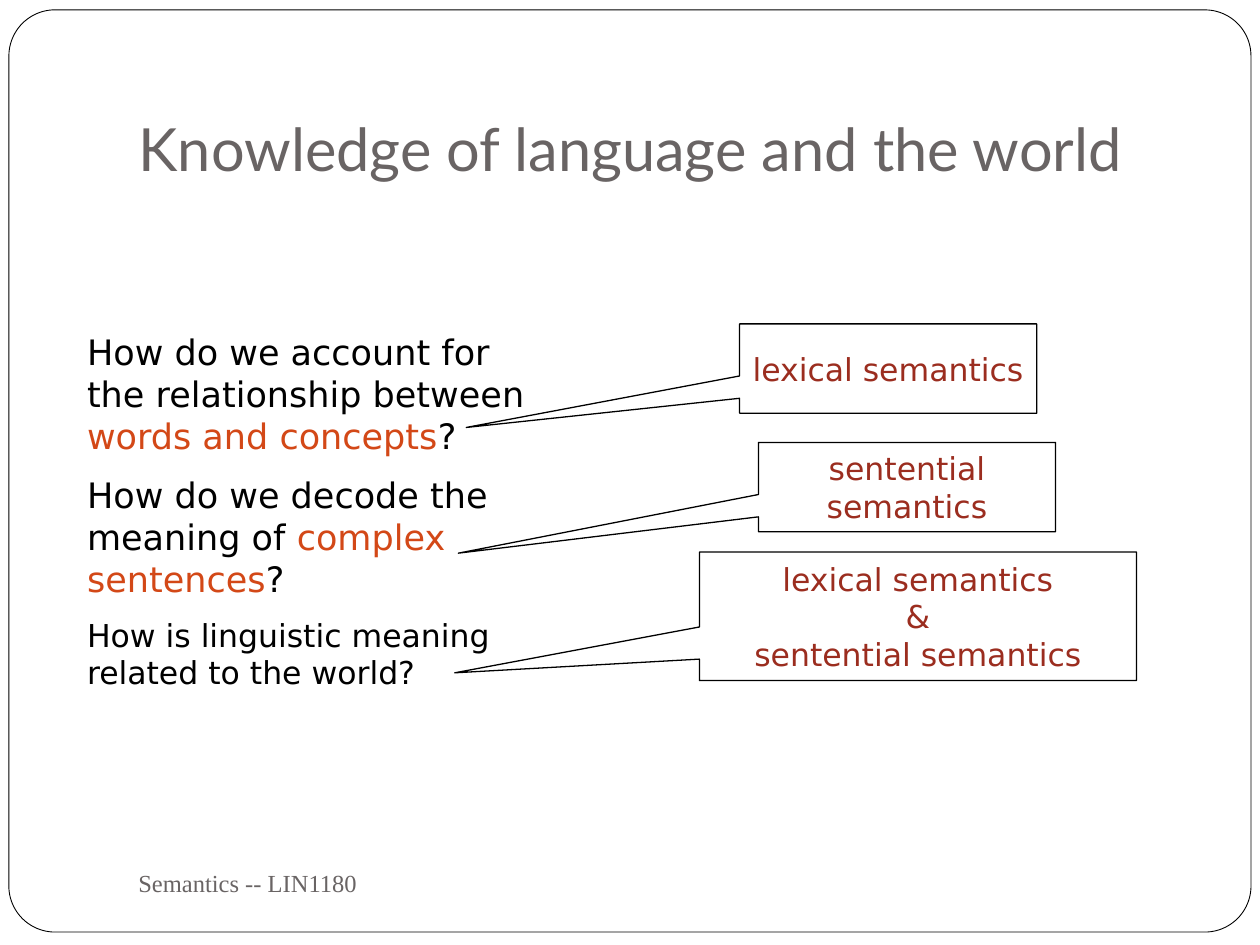
from dataclasses import dataclass

from lxml import etree
from pptx import Presentation
from pptx.dml.color import RGBColor
from pptx.enum import shapes, text
from pptx.oxml import ns
from pptx.util import Cm, Pt


@dataclass(frozen=True)
class Theme:
    white: str = "FFFFFF"
    black: str = "000000"
    grey: str = "696464"
    accent: str = "D34817"
    note: str = "9B2D1F"
    head: str = "Lato"
    body: str = "DejaVu Sans"
    foot: str = "Times New Roman"
    big: int = 34
    mid: int = 20
    small: int = 18
    tiny: int = 14


@dataclass(frozen=True)
class Box:
    x: float
    y: float
    w: float
    h: float


@dataclass(frozen=True)
class Run:
    text: str
    size: int
    color: str
    face: str


@dataclass(frozen=True)
class Callout:
    box: Box
    tip: tuple[float, float]
    lines: tuple[str, ...]


T = Theme()


def ask(words: str, color: str = T.black, size: int = T.mid) -> Run:
    return Run(words, size, color, T.body)


TITLE = Run("Knowledge of language and the world", T.big, T.grey, T.head)
FOOTER = Run("Semantics -- LIN1180", T.tiny, T.grey, T.foot)
ASKS = [
    [ask("How do we account for the relationship between "),
     ask("words and concepts", T.accent), ask("?")],
    [ask("How do we decode the meaning of "),
     ask("complex sentences", T.accent), ask("?")],
    [ask("How is linguistic meaning related to the world?", size=T.small)],
]
CALLOUTS = [
    Callout(Box(14.91, 6.53, 5.99, 1.8), (-1.42, 0.66), ("lexical semantics",)),
    Callout(Box(14.1, 11.13, 8.81, 2.59), (-1.06, 0.44),
            ("lexical semantics", "&", "sentential semantics")),
    Callout(Box(15.29, 8.92, 5.99, 1.8), (-1.51, 0.74), ("sentential semantics",)),
]


def apply(item, values: dict) -> None:
    for name, value in values.items():
        setattr(item, name, value)


def place(shape, box: Box) -> None:
    apply(shape, {"left": Cm(box.x), "top": Cm(box.y),
                  "width": Cm(box.w), "height": Cm(box.h)})


def write(shape, paras: list[list[Run]], anchor, align=text.PP_ALIGN.LEFT,
          gap: float = 0) -> None:
    frame = shape.text_frame
    apply(frame, {"word_wrap": True, "auto_size": text.MSO_AUTO_SIZE.NONE,
                  "vertical_anchor": anchor})
    for num, runs in enumerate(paras):
        para = frame.add_paragraph() if num else frame.paragraphs[0]
        space = Pt(runs[0].size * gap) if num else Pt(0)
        apply(para, {"alignment": align, "space_before": space})
        for run in runs:
            part = para.add_run()
            part.text = run.text
            apply(part.font, {"size": Pt(run.size), "name": run.face})
            part.font.color.rgb = RGBColor.from_string(run.color)


def plain(shape) -> None:
    for para in shape.text_frame.paragraphs:
        props = para._p.get_or_add_pPr()
        props.set("marL", "0")
        props.set("indent", "0")
        etree.SubElement(props, ns.qn("a:buNone"))


def draw(slide, kind, box: Box, adjust: tuple[float, ...], width: float):
    shape = slide.shapes.add_shape(
        kind, Cm(box.x), Cm(box.y), Cm(box.w), Cm(box.h))
    shape.shadow.inherit = False
    shape.fill.solid()
    shape.fill.fore_color.rgb = RGBColor.from_string(T.white)
    shape.line.color.rgb = RGBColor.from_string(T.black)
    shape.line.width = Pt(width)
    for num, value in enumerate(adjust):
        shape.adjustments[num] = value
    return shape


def callout(slide, item: Callout) -> None:
    shape = draw(slide, shapes.MSO_SHAPE.RECTANGULAR_CALLOUT,
                 item.box, item.tip, 0.75)
    paras = [[Run(line, T.small, T.note, T.body)] for line in item.lines]
    write(shape, paras, text.MSO_ANCHOR.MIDDLE, text.PP_ALIGN.CENTER)


def main() -> None:
    deck = Presentation()
    apply(deck, {"slide_width": Cm(25.4), "slide_height": Cm(19.05)})
    slide = deck.slides.add_slide(deck.slide_layouts[1])
    title, body = slide.placeholders

    border = draw(slide, shapes.MSO_SHAPE.ROUNDED_RECTANGLE,
                  Box(0.18, 0.2, 25.04, 18.59), (0.05,), 0.5)
    title.element.addprevious(border.element)

    place(title, Box(2.54, 0.76, 21.59, 3.18))
    write(title, [[TITLE]], text.MSO_ANCHOR.BOTTOM)
    title.text_frame.margin_bottom = Cm(0.25)

    place(body, Box(1.5, 6.53, 10.01, 8.94))
    write(body, ASKS, text.MSO_ANCHOR.TOP, gap=0.5)
    plain(body)

    foot = slide.shapes.add_textbox(Cm(2.54), Cm(17.15), Cm(11), Cm(1.27))
    write(foot, [[FOOTER]], text.MSO_ANCHOR.MIDDLE)

    for item in CALLOUTS:
        callout(slide, item)
    deck.save("out.pptx")


if __name__ == "__main__":
    main()
